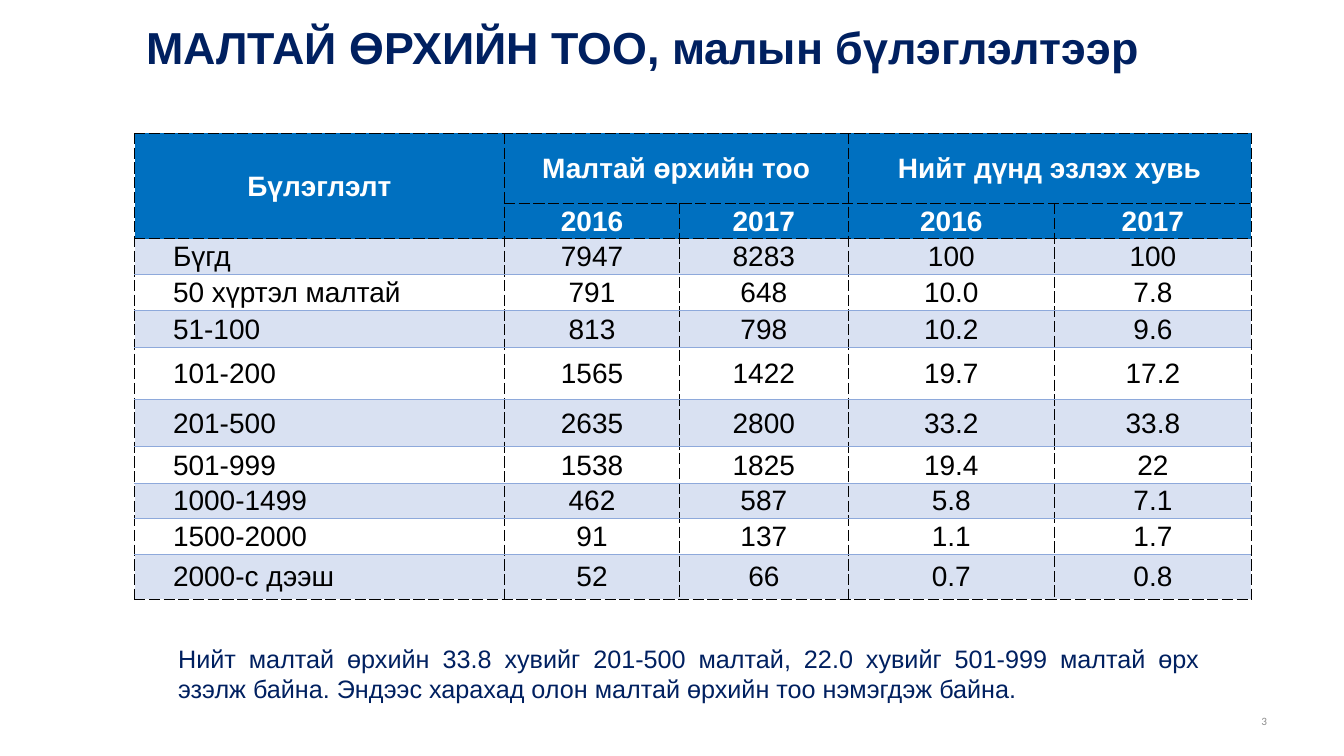
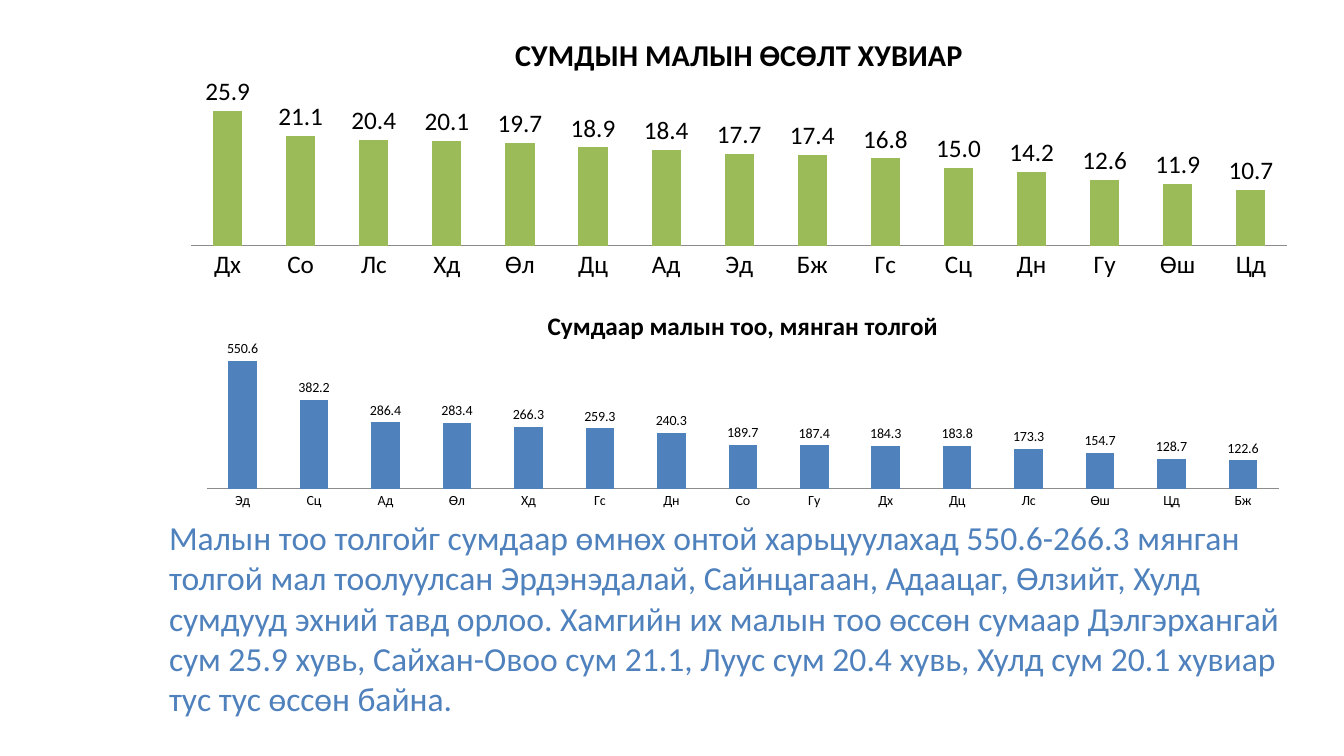
from dataclasses import dataclass

from lxml.etree import SubElement
from pptx import Presentation
from pptx.chart.data import CategoryChartData
from pptx.dml.color import RGBColor
from pptx.enum.chart import XL_CHART_TYPE, XL_LABEL_POSITION, XL_TICK_MARK
from pptx.enum.text import MSO_ANCHOR, MSO_AUTO_SIZE, PP_ALIGN
from pptx.oxml import parse_xml
from pptx.oxml.ns import nsdecls, qn
from pptx.slide import Slide
from pptx.table import _Cell
from pptx.text.text import TextFrame
from pptx.util import Cm, Pt

NAVY, BLUE, GREEN = "002060", "4F81BD", "9BBB59"
HEAD, BAND, RULE = "0070C0", "D9E1F2", "8EA9DB"
BLACK, WHITE, GREY = "000000", "FFFFFF", "8C8C8C"
SANS, BODY = "Arial", "Calibri"

COLS = (9.32, 4.42, 4.24, 5.21, 4.95)
ROWS = (1.77, 0.88, 0.9, 0.92, 0.92, 1.3, 1.2, 0.92, 0.88, 0.92, 1.12)
HOUSEHOLDS = (
    ("Бүлэглэлт", "Малтай өрхийн тоо", "", "Нийт дүнд эзлэх хувь", ""),
    ("", "2016", "2017", "2016", "2017"),
    ("Бүгд", "7947", "8283", "100", "100"),
    ("50 хүртэл малтай", "791", "648", "10.0", "7.8"),
    ("51-100", "813", "798", "10.2", "9.6"),
    ("101-200", "1565", "1422", "19.7", "17.2"),
    ("201-500", "2635", "2800", "33.2", "33.8"),
    ("501-999", "1538", "1825", "19.4", "22"),
    ("1000-1499", "462", "587", "5.8", "7.1"),
    ("1500-2000", "91", "137", "1.1", "1.7"),
    ("2000-с дээш", "52", "66", "0.7", "0.8"),
)


@dataclass(frozen=True)
class Box:
    """A position and size in centimetres."""

    x: float
    y: float
    w: float
    h: float

    def emu(self) -> tuple[Cm, Cm, Cm, Cm]:
        """Return left, top, width and height as lengths."""
        return Cm(self.x), Cm(self.y), Cm(self.w), Cm(self.h)


@dataclass(frozen=True)
class Bars:
    """A column chart with its title, data and plot area fractions."""

    title: str
    box: Box
    plot: Box
    cats: str
    vals: tuple[float, ...]
    color: str
    top: float
    size: float
    title_size: float
    overlap: int = 0


CHARTS = (
    Bars("СУМДЫН МАЛЫН ӨСӨЛТ ХУВИАР", Box(4.24, 0.43, 28.78, 6.78),
         Box(0.02, 0.27, 0.96, 0.58),
         "Дх Со Лс Хд Өл Дц Ад Эд Бж Гс Сц Дн Гу Өш Цд",
         (25.9, 21.1, 20.4, 20.1, 19.7, 18.9, 18.4, 17.7, 17.4, 16.8,
          15, 14.2, 12.6, 11.9, 10.7), GREEN, 30, 18, 21.6),
    Bars("Сумдаар малын тоо, мянган толгой", Box(4.65, 7.42, 28.14, 5.51),
         Box(0.02, 0.25, 0.96, 0.64),
         "Эд Сц Ад Өл Хд Гс Дн Со Гу Дх Дц Лс Өш Цд Бж",
         (550.6, 382.2, 286.4, 283.4, 266.3, 259.3, 240.3, 189.7, 187.4,
          184.3, 183.8, 173.3, 154.7, 128.7, 122.6), BLUE, 600, 10, 18, -25),
)


def rgb(color: str) -> RGBColor:
    """Turn a hex string into a colour."""
    return RGBColor.from_string(color)


def put_text(tf: TextFrame, text: str, *, size: float, color: str,
             font: str = SANS, bold: bool = False,
             align: PP_ALIGN = PP_ALIGN.LEFT) -> None:
    """Write one formatted paragraph into a text frame."""
    p = tf.paragraphs[0]
    p.alignment = align
    r = p.add_run()
    r.text = text
    r.font.name, r.font.size, r.font.bold = font, Pt(size), bold
    r.font.color.rgb = rgb(color)


def add_text(s: Slide, box: Box, text: str, *,
             anchor: MSO_ANCHOR = MSO_ANCHOR.TOP, **fmt) -> None:
    """Add a wrapping text box."""
    tf = s.shapes.add_textbox(*box.emu()).text_frame
    tf.word_wrap = True
    tf.vertical_anchor = anchor
    put_text(tf, text, **fmt)


def add_title(s: Slide, box: Box, text: str) -> None:
    """Move and fill the title placeholder."""
    sp = s.shapes.title
    sp.left, sp.top, sp.width, sp.height = box.emu()
    tf = sp.text_frame
    tf.word_wrap = True
    tf.auto_size = MSO_AUTO_SIZE.NONE
    tf.vertical_anchor = MSO_ANCHOR.TOP
    put_text(tf, text, size=32, color=NAVY, bold=True, align=PP_ALIGN.CENTER)


def set_border(cell: _Cell, side: str, color: str) -> None:
    """Draw a cell edge, dashed when it is black."""
    ln = SubElement(cell._tc.get_or_add_tcPr(), qn(f"a:ln{side}"), w=str(Pt(0.5)))
    fill = SubElement(ln, qn("a:solidFill"))
    SubElement(fill, qn("a:srgbClr"), val=color)
    SubElement(ln, qn("a:prstDash"), val="dash" if color == BLACK else "solid")


def format_cell(cell: _Cell, row: int, col: int, text: str) -> None:
    """Set the borders, fill, margins and text of a table cell."""
    head, last = row < 2, len(ROWS) - 1
    edges = {"L": BLACK, "R": BLACK,
             "T": BLACK if row <= 2 else RULE,
             "B": BLACK if head or row == last else RULE}
    for side, color in edges.items():
        set_border(cell, side, color)
    if head or row % 2 == 0:
        cell.fill.solid()
        cell.fill.fore_color.rgb = rgb(HEAD if head else BAND)
    else:
        cell.fill.background()
    label = col == 0 and not head
    cell.margin_left = Cm(0.97 if label else 0.03)
    cell.margin_right = cell.margin_top = Cm(0.03)
    cell.margin_bottom = 0
    cell.vertical_anchor = MSO_ANCHOR.MIDDLE
    put_text(cell.text_frame, text, size=20, bold=head,
             color=WHITE if head else BLACK,
             align=PP_ALIGN.LEFT if label else PP_ALIGN.CENTER)


def add_households(s: Slide, x: float, y: float) -> None:
    """Add the table of households by herd size."""
    box = Box(x, y, sum(COLS), sum(ROWS))
    table = s.shapes.add_table(len(ROWS), len(COLS), *box.emu()).table
    table.first_row = table.horz_banding = False
    for col, width in zip(table.columns, COLS):
        col.width = Cm(width)
    for i, (height, texts) in enumerate(zip(ROWS, HOUSEHOLDS)):
        table.rows[i].height = Cm(height)
        for j, text in enumerate(texts):
            format_cell(table.cell(i, j), i, j, text)
    for start, end in (((0, 0), (1, 0)), ((0, 1), (0, 2)), ((0, 3), (0, 4))):
        table.cell(*start).merge(table.cell(*end))


def add_bars(s: Slide, bars: Bars) -> None:
    """Add a labelled column chart."""
    data = CategoryChartData(number_format="0.0")
    data.categories = bars.cats.split()
    data.add_series("Series 1", bars.vals)
    chart = s.shapes.add_chart(
        XL_CHART_TYPE.COLUMN_CLUSTERED, *bars.box.emu(), data).chart
    chart.font.name, chart.font.size = BODY, Pt(bars.size)
    chart.font.color.rgb = rgb(BLACK)
    chart.has_legend = False
    chart.has_title = True
    put_text(chart.chart_title.text_frame, bars.title, size=bars.title_size,
             color=BLACK, font=BODY, bold=True, align=PP_ALIGN.CENTER)
    chart.chart_title.include_in_layout = False

    values, cats = chart.value_axis, chart.category_axis
    values.minimum_scale, values.maximum_scale = 0, bars.top
    values.has_major_gridlines = values.visible = False
    cats.major_tick_mark = XL_TICK_MARK.NONE
    cats.format.line.color.rgb = rgb(GREY)
    cats.format.line.width = Pt(0.75)

    plot = chart.plots[0]
    plot.gap_width, plot.overlap = 150, bars.overlap
    plot.vary_by_categories = False
    fill = plot.series[0].format.fill
    fill.solid()
    fill.fore_color.rgb = rgb(bars.color)
    plot.has_data_labels = True
    labels = plot.data_labels
    labels.show_value = True
    labels.number_format, labels.number_format_is_linked = "0.0", False
    labels.position = XL_LABEL_POSITION.OUTSIDE_END
    place_plot(chart.element.find(".//" + qn("c:plotArea")), bars.plot)


def place_plot(area, box: Box) -> None:
    """Fix the inner plot area as fractions of the chart."""
    old = area.find(qn("c:layout"))
    if old is not None:
        area.remove(old)
    sizes = "".join(f'<c:{k} val="{getattr(box, k)}"/>' for k in "xywh")
    area.insert(0, parse_xml(
        f'<c:layout {nsdecls("c")}><c:manualLayout>'
        '<c:layoutTarget val="inner"/>'
        f'<c:xMode val="edge"/><c:yMode val="edge"/>{sizes}'
        '</c:manualLayout></c:layout>'))


def households_slide(prs) -> None:
    """Build the slide on households by herd size."""
    s = prs.slides.add_slide(prs.slide_layouts[5])
    add_title(s, Box(3.18, 0.38, 26.04, 1.63),
              "МАЛТАЙ ӨРХИЙН ТОО, малын бүлэглэлтээр")
    add_households(s, 3.39, 3.36)
    add_text(s, Box(4.24, 16.08, 26.24, 1.8),
             "Нийт малтай өрхийн 33.8 хувийг 201-500 малтай, 22.0 хувийг "
             "501-999 малтай өрх эзэлж байна. Эндээс харахад олон малтай "
             "өрхийн тоо нэмэгдэж байна.",
             size=18, color=NAVY, align=PP_ALIGN.JUSTIFY)
    add_text(s, Box(24.28, 17.65, 7.9, 1.02), "3", anchor=MSO_ANCHOR.MIDDLE,
             size=8, color=GREY, font=BODY, align=PP_ALIGN.RIGHT)


def growth_slide(prs) -> None:
    """Build the slide on livestock by district."""
    s = prs.slides.add_slide(prs.slide_layouts[6])
    for bars in CHARTS:
        add_bars(s, bars)
    add_text(s, Box(4.01, 12.9, 28.78, 5.38),
             "Малын тоо толгойг сумдаар өмнөх онтой харьцуулахад 550.6-266.3 "
             "мянган толгой мал тоолуулсан Эрдэнэдалай, Сайнцагаан, Адаацаг, "
             "Өлзийт, Хулд сумдууд эхний тавд орлоо. Хамгийн их малын тоо "
             "өссөн сумаар Дэлгэрхангай сум 25.9 хувь, Сайхан-Овоо сум 21.1, "
             "Луус сум 20.4 хувь, Хулд сум 20.1 хувиар тус тус өссөн байна.",
             size=24, color=BLUE, font=BODY)


def main() -> None:
    """Build and save the presentation."""
    prs = Presentation()
    prs.slide_width, prs.slide_height = Cm(33.87), Cm(19.05)
    households_slide(prs)
    growth_slide(prs)
    prs.save("out.pptx")


if __name__ == "__main__":
    main()
